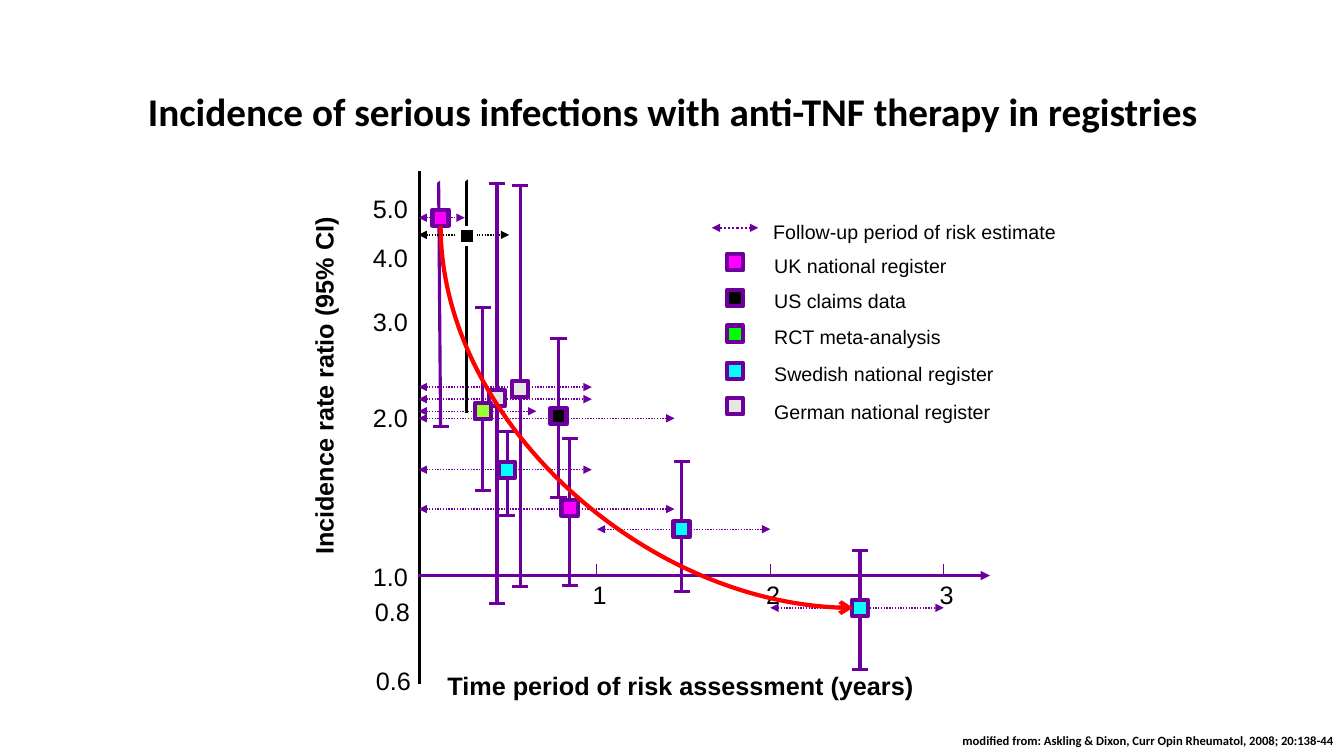
from collections import namedtuple

from lxml.etree import SubElement
from pptx import Presentation
from pptx.dml.color import RGBColor
from pptx.enum.dml import MSO_LINE, MSO_PATTERN
from pptx.enum.shapes import MSO_CONNECTOR, MSO_SHAPE
from pptx.enum.text import MSO_ANCHOR, MSO_AUTO_SIZE, PP_ALIGN
from pptx.oxml.ns import qn
from pptx.util import Inches, Pt

BLACK = RGBColor(0, 0, 0)
WHITE = RGBColor(255, 255, 255)
PURPLE = RGBColor(0x6D, 0x00, 0x9D)
RED = RGBColor(255, 0, 0)
ROSE = RGBColor(0xFF, 0x00, 0x66)
UK = RGBColor(0xFF, 0x00, 0xFF)
US = BLACK
RCT = RGBColor(0x99, 0xFF, 0x33)
RCT_KEY = RGBColor(0x00, 0xFF, 0x00)
SWEDISH = RGBColor(0x00, 0xFF, 0xFF)
GERMAN = RGBColor(0xE7, 0xE6, 0xE6)

# Plot grid, in inches
ORIGIN_X, BASELINE_Y = 4.15, 5.71
FIRST_YEAR_X, YEAR = 5.92, 1.72
MARKER = 0.16

LABEL = {"name": "Arial", "size": Pt(18), "bold": False}
AXIS_TITLE = {**LABEL, "bold": True}
KEY = {**LABEL, "size": Pt(14)}
SOURCE = {"name": "Calibri", "size": Pt(9), "bold": True}
TITLE = {**SOURCE, "size": Pt(28)}

# Marker centre, interval top and bottom, follow-up start, end and height
Study = namedtuple("Study", "x y top bottom start end follow_y fill lean cut ink",
                   defaults=(0, False, PURPLE))
STUDIES = [
    Study(4.37, 2.16, 1.76, 4.23, 4.15, 4.61, 2.16, UK, -0.02, True),
    Study(5.65, 5.04, 4.35, 5.81, 4.15, 6.69, 5.05, UK),
    Study(5.03, 4.66, 4.28, 5.11, 4.15, 5.87, 4.66, SWEDISH),
    Study(6.76, 5.25, 4.58, 5.87, 5.92, 7.64, 5.25, SWEDISH),
    Study(8.53, 6.03, 5.46, 6.64, 7.64, 9.36, 6.03, SWEDISH),
    Study(4.63, 2.34, 1.76, 4.11, 4.15, 5.05, 2.33, US, 0, True, BLACK),
    Study(5.54, 4.13, 3.36, 4.94, 4.15, 6.69, 4.15, US),
    Study(4.93, 3.95, 1.82, 5.99, 4.15, 5.87, 3.96, GERMAN),
    Study(5.16, 3.86, 1.84, 5.82, 4.15, 5.87, 3.84, GERMAN),
    Study(4.79, 4.08, 3.05, 4.87, 4.15, 5.32, 4.08, RCT),
]
# Rate ratio labels: text, left, top
RATIOS = [("5.0", 3.6, 1.87), ("4.0", 3.6, 2.35), ("3.0", 3.6, 2.99), ("2.0", 3.6, 3.94),
          ("1.0", 3.6, 5.52), ("0.8", 3.62, 5.87), ("0.6", 3.63, 6.55)]
# Legend: text, fill, marker top, text top, text width
LEGEND = [
    ("UK national register", UK, 2.52, 2.47, 1.92),
    ("US claims data", US, 2.88, 2.82, 1.52),
    ("RCT meta-analysis", RCT_KEY, 3.23, 3.17, 1.86),
    ("Swedish national register", SWEDISH, 3.6, 3.54, 2.39),
    ("German national register", GERMAN, 3.95, 3.92, 2.35),
]


def add_line(slide, start, end, color=PURPLE, width=2.25, dash=None,
             head=None, tail=None, kind=MSO_CONNECTOR.STRAIGHT):
    line = slide.shapes.add_connector(kind, *map(Inches, start + end))
    line.line.color.rgb = color
    line.line.width = Pt(width)
    if dash:
        line.line.dash_style = dash
    properties = line._element.spPr
    stroke = properties.find(qn("a:ln"))
    for tag, arrow in (("a:headEnd", head), ("a:tailEnd", tail)):
        if arrow:
            SubElement(stroke, qn(tag)).set("type", arrow)
    SubElement(properties, qn("a:effectLst"))
    return line


def add_follow_up(slide, start, end, y, color=PURPLE, width=1):
    add_line(slide, (start, y), (end, y), color, width, MSO_LINE.ROUND_DOT,
             "triangle", "triangle")


def add_marker(slide, left, top, fill, border=PURPLE):
    marker = slide.shapes.add_shape(MSO_SHAPE.RECTANGLE,
                                    *map(Inches, (left, top, MARKER, MARKER)))
    marker.shadow.inherit = False
    if fill == US:
        marker.fill.patterned()
        marker.fill.pattern = MSO_PATTERN.DARK_HORIZONTAL
        marker.fill.fore_color.rgb = BLACK
        marker.fill.back_color.rgb = ROSE
    else:
        marker.fill.solid()
        marker.fill.fore_color.rgb = fill
    marker.line.color.rgb = border
    marker.line.width = Pt(3)


def write(paragraph, text, style, align):
    paragraph.text = text
    paragraph.alignment = align
    for attribute, value in style.items():
        setattr(paragraph.font, attribute, value)
    paragraph.font.color.rgb = BLACK


def add_text(slide, text, left, top, width, height, style, align=PP_ALIGN.LEFT, turn=0):
    box = slide.shapes.add_textbox(*map(Inches, (left, top, width, height)))
    box.rotation = turn
    box.text_frame.word_wrap = False
    box.text_frame.auto_size = MSO_AUTO_SIZE.SHAPE_TO_FIT_TEXT
    write(box.text_frame.paragraphs[0], text, style, align)


def add_title(slide, text):
    title = slide.shapes.title
    title.left, title.top, title.width, title.height = map(Inches, (0.92, 0.4, 11.5, 1.45))
    frame = title.text_frame
    frame.auto_size = MSO_AUTO_SIZE.NONE
    frame.vertical_anchor = MSO_ANCHOR.MIDDLE
    write(frame.paragraphs[0], text, TITLE, PP_ALIGN.CENTER)
    frame.paragraphs[0].line_spacing = 0.9


def add_axes(slide):
    add_line(slide, (4.16, 1.7), (4.16, 6.79), BLACK)
    add_line(slide, (ORIGIN_X, BASELINE_Y), (9.82, BASELINE_Y), tail="triangle")
    for text, left, top in RATIOS:
        add_text(slide, text, left, top, 0.55, 0.4, LABEL)
    for year in range(3):
        x = FIRST_YEAR_X + year * YEAR
        add_line(slide, (x, BASELINE_Y - 0.11), (x, BASELINE_Y), width=0.75)
        add_text(slide, str(year + 1), x - 0.14, 5.7, 0.34, 0.4, LABEL)
    add_text(slide, "Incidence rate ratio (95% CI)", 1.42, 3.63, 3.58, 0.4,
             AXIS_TITLE, PP_ALIGN.CENTER, 270)
    add_text(slide, "Time period of risk assessment (years)", 4.34, 6.6, 4.87, 0.4, AXIS_TITLE)


def add_study(slide, study):
    half = MARKER / 2
    left, right = study.x - half, study.x + half
    border = WHITE if study.ink == BLACK else PURPLE
    add_follow_up(slide, study.start, study.end, study.follow_y, study.ink)
    add_line(slide, (study.x + study.lean, study.top), (study.x, study.bottom), study.ink)
    add_line(slide, (left, study.bottom), (right, study.bottom), border)
    if study.cut:  # interval runs off the scale
        add_line(slide, (left, 1.82), (right, 1.7), WHITE, 3)
    else:
        add_line(slide, (left, study.top), (right, study.top), border)
    add_marker(slide, left, study.y - half, study.fill, border)


def add_legend(slide):
    add_follow_up(slide, 7.06, 7.52, 2.26, width=1.5)
    add_text(slide, "Follow-up period of risk estimate", 7.57, 2.13, 3.02, 0.34, KEY)
    for text, fill, marker_top, text_top, width in LEGEND:
        add_marker(slide, 7.21, marker_top, fill)
        add_text(slide, text, 7.58, text_top, width, 0.34, KEY)


def add_trend(slide):
    # Quarter bend, turned so that it falls steeply and then levels out
    trend = add_line(slide, (8.31, 2.09), (4.52, 6.18), RED, 3, tail="arrow",
                     kind=MSO_CONNECTOR.CURVE)
    properties = trend._element.spPr
    properties.find(qn("a:xfrm")).set("rot", str(270 * 60000))
    properties.find(qn("a:prstGeom")).set("prst", "curvedConnector2")


def main():
    presentation = Presentation()
    presentation.slide_width, presentation.slide_height = Inches(13.33), Inches(7.5)
    slide = presentation.slides.add_slide(presentation.slide_layouts[5])
    add_title(slide, "Incidence of serious infections with anti-TNF therapy in registries")
    add_axes(slide)
    for study in STUDIES:
        add_study(slide, study)
    add_legend(slide)
    add_trend(slide)
    add_text(slide, "modified from: Askling & Dixon, Curr Opin Rheumatol, 2008; 20:138-44",
             9.39, 7.22, 3.93, 0.25, SOURCE, PP_ALIGN.RIGHT)
    presentation.save("out.pptx")


if __name__ == "__main__":
    main()
